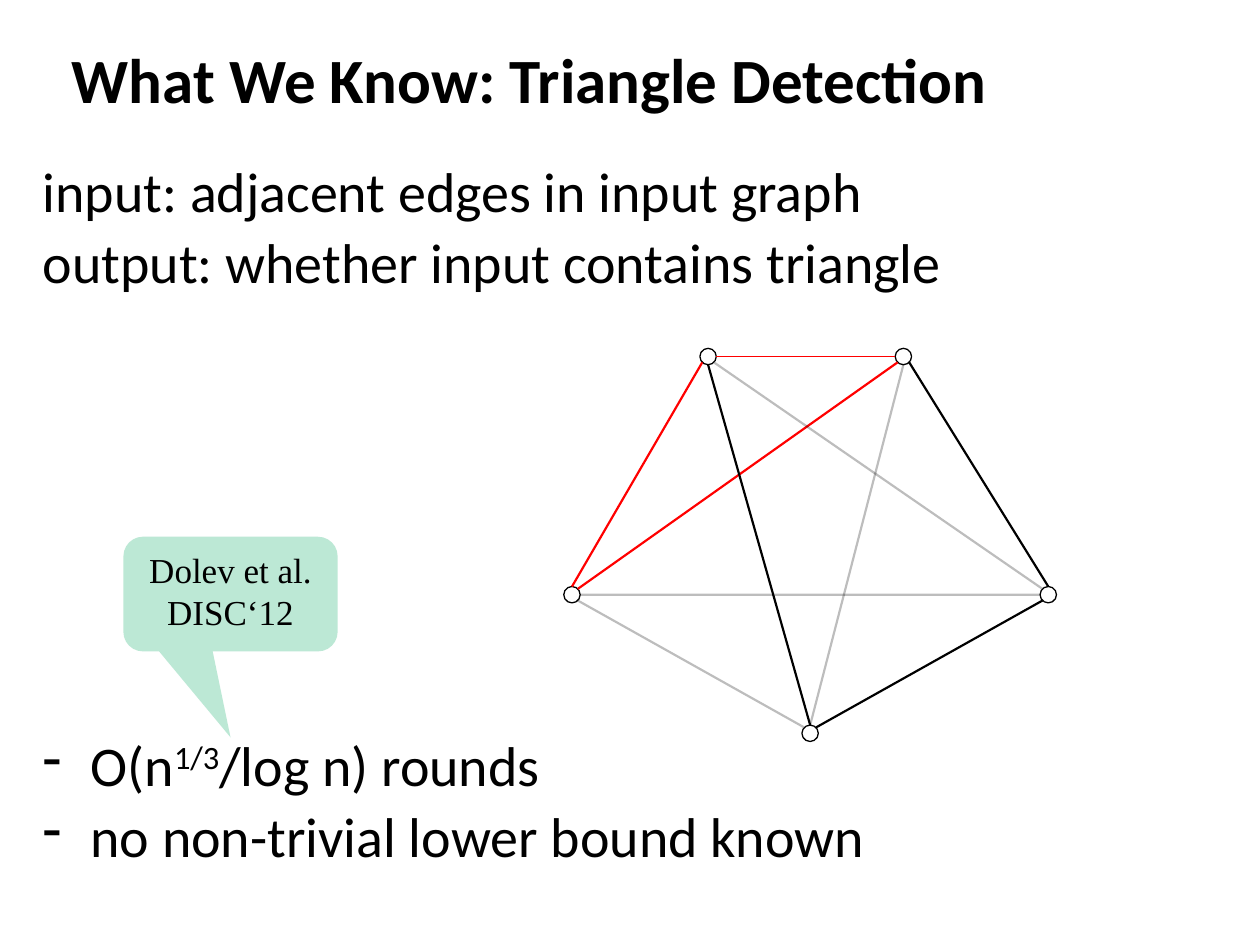
from lxml import etree
from pptx import Presentation
from pptx import util as u
from pptx.dml.color import RGBColor
from pptx.enum import shapes, text
from pptx.oxml.ns import qn

W, H = 10, 7.5
COLORS = {"ink": "000000", "triangle": "FF0000", "callout": "AAE2CA"}
TITLE = "What We Know: Triangle Detection"
PROBLEM = [[("input: adjacent edges in input graph", False)],
           [("output: whether input contains triangle", False)]]
RESULTS = [[("O(n", False), ("1/3", True), ("/log n) rounds", False)],
           [("no non-trivial lower bound known", False)]]
CITATION = ["Dolev et al.", "DISC‘12"]

# Node centres
NODES = {"top left": (5.62, 2.83), "top right": (7.17, 2.83),
         "left": (4.54, 4.72), "right": (8.32, 4.72), "bottom": (6.43, 5.82)}
RADIUS = 0.065
DIAGONAL = RADIUS * 0.71
SITES = {"n": (0, -RADIUS), "s": (0, RADIUS), "w": (-RADIUS, 0), "e": (RADIUS, 0),
         "nw": (-DIAGONAL, -DIAGONAL), "ne": (DIAGONAL, -DIAGONAL),
         "sw": (-DIAGONAL, DIAGONAL), "se": (DIAGONAL, DIAGONAL)}
# from node, side, to node, side, colour, width, opacity in percent
EDGES = [
    ("top left", "e", "top right", "w", "triangle", 0.75, 100),
    ("top right", "se", "right", "n", "ink", 1.25, 100),
    ("right", "sw", "bottom", "ne", "ink", 1.25, 100),
    ("left", "n", "top left", "sw", "triangle", 1.25, 100),
    ("left", "ne", "top right", "sw", "triangle", 1.25, 100),
    ("left", "e", "right", "w", "ink", 1.25, 25),
    ("left", "se", "bottom", "nw", "ink", 1.25, 25),
    ("bottom", "n", "top right", "s", "ink", 1.25, 25),
    ("bottom", "n", "top left", "s", "ink", 1.25, 100),
    ("right", "nw", "top left", "se", "ink", 1.25, 25),
]


def rgb(name):
    return RGBColor.from_string(COLORS[name])


def inches(*values):
    return [u.Inches(v) for v in values]


def set_font(font, **formats):
    for name, value in formats.items():
        setattr(font, name, value)
    font.color.rgb = rgb("ink")


def set_opacity(parent, percent):
    """Make the solid colour inside parent partly transparent."""
    color = parent.find(qn("a:solidFill"))[0]
    etree.SubElement(color, qn("a:alpha"), val=str(percent * 1000))


def add_lines(slide, top, lines, bullet=None):
    box = slide.shapes.add_textbox(*inches(0.24, top, 9.43, 1.25))
    tf = box.text_frame
    tf.word_wrap = True
    for i, runs in enumerate(lines):
        p = tf.paragraphs[0] if i == 0 else tf.add_paragraph()
        if bullet:
            pPr = p._p.get_or_add_pPr()
            pPr.set("marL", str(u.Inches(0.38)))
            pPr.set("indent", str(u.Inches(-0.38)))
            etree.SubElement(pPr, qn("a:buChar"), char=bullet)
        p.line_spacing = 0.9
        p.space_before = u.Pt(6 if i else 0)
        for words, raised in runs:
            r = p.add_run()
            r.text = words
            set_font(r.font, name="Calibri", size=u.Pt(32))
            if raised:
                r.font._element.set("baseline", "30000")


def add_graph(slide):
    for x, y in NODES.values():
        sp = slide.shapes.add_shape(
            shapes.MSO_SHAPE.OVAL,
            *inches(x - RADIUS, y - RADIUS, 2 * RADIUS, 2 * RADIUS))
        sp.shadow.inherit = False
        sp.fill.background()
        sp.line.color.rgb = rgb("ink")
        sp.line.width = u.Pt(0.75)
    for start, side, end, end_side, color, width, opacity in EDGES:
        points = [c + d for node, s in ((start, side), (end, end_side))
                  for c, d in zip(NODES[node], SITES[s])]
        edge = slide.shapes.add_connector(shapes.MSO_CONNECTOR.STRAIGHT, *inches(*points))
        edge.line.color.rgb = rgb(color)
        edge.line.width = u.Pt(width)
        spPr = edge._element.spPr
        if opacity < 100:
            set_opacity(spPr.find(qn("a:ln")), opacity)
        etree.SubElement(spPr, qn("a:effectLst"))


def add_callout(slide):
    sp = slide.shapes.add_shape(shapes.MSO_SHAPE.ROUNDED_RECTANGULAR_CALLOUT,
                                *inches(0.98, 4.26, 1.7, 0.91))
    for i, value in enumerate((0, 1.25, 0.17)):
        sp.adjustments[i] = value
    sp.shadow.inherit = False
    sp.fill.solid()
    sp.fill.fore_color.rgb = rgb("callout")
    set_opacity(sp._element.spPr, 79)
    sp.line.fill.background()
    tf = sp.text_frame
    tf.word_wrap = True
    tf.vertical_anchor = text.MSO_ANCHOR.TOP
    for i, line in enumerate(CITATION):
        p = tf.paragraphs[0] if i == 0 else tf.add_paragraph()
        p.text = line
        p.alignment = text.PP_ALIGN.CENTER
        set_font(p.runs[0].font, name="Times New Roman", size=u.Pt(20))


def main():
    prs = Presentation()
    prs.slide_width, prs.slide_height = inches(W, H)
    s = prs.slides.add_slide(prs.slide_layouts[5])
    title = s.shapes.title
    title.left, title.top, title.width, title.height = inches(0.47, 0.25, 9.19, 0.75)
    title.text_frame.text = TITLE
    title.text_frame.vertical_anchor = text.MSO_ANCHOR.MIDDLE
    p = title.text_frame.paragraphs[0]
    p.alignment = text.PP_ALIGN.LEFT
    set_font(p.runs[0].font, name="Calibri", size=u.Pt(36), bold=True)
    add_lines(s, 1.25, PROBLEM)
    add_lines(s, 5.81, RESULTS, bullet="-")
    add_graph(s)
    add_callout(s)
    prs.save("out.pptx")


if __name__ == "__main__":
    main()
